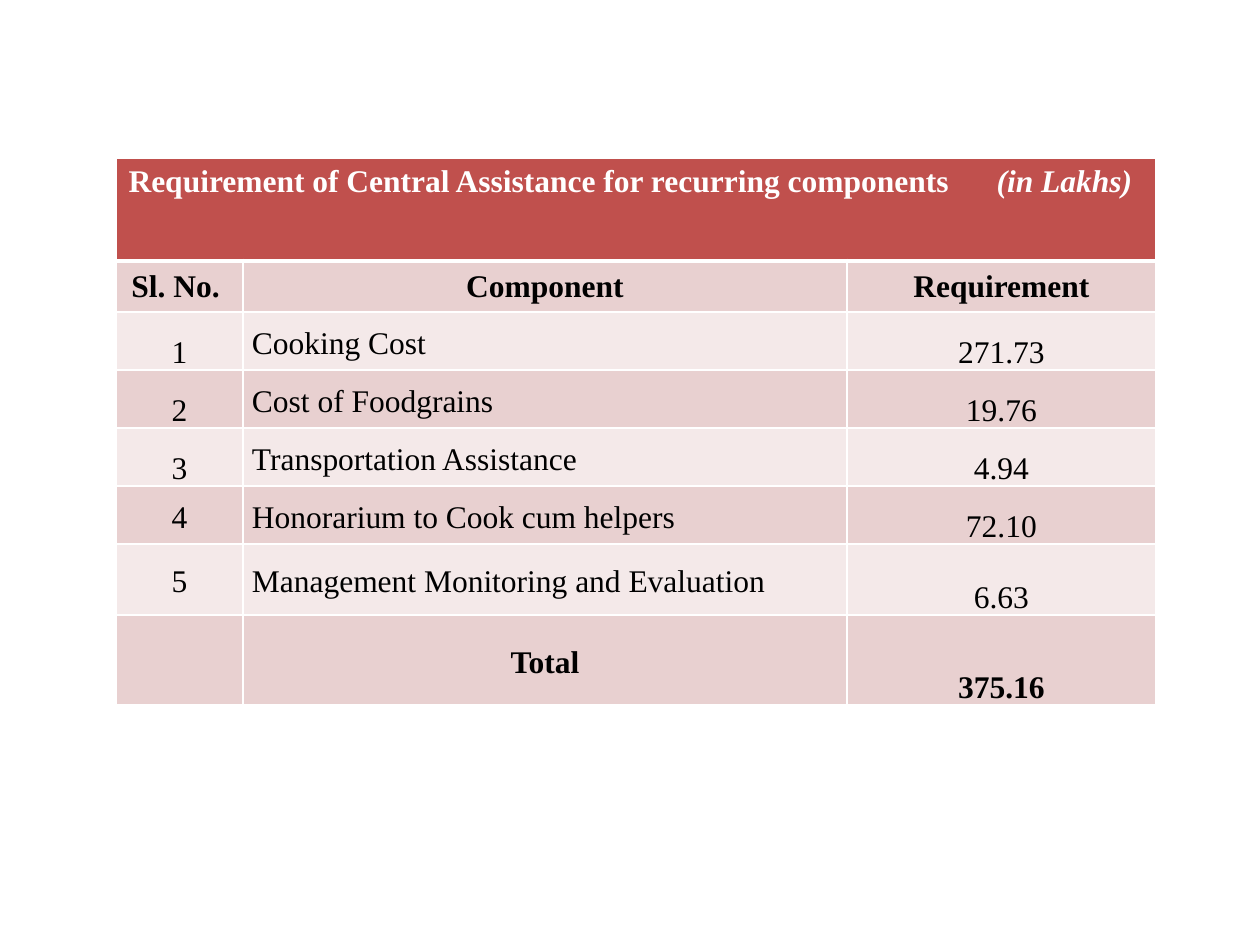
from lxml import etree
from pptx import Presentation
from pptx.dml.color import RGBColor
from pptx.enum.text import MSO_ANCHOR, PP_ALIGN
from pptx.oxml.ns import qn
from pptx.util import Emu, Pt

LEFT, CENTER = PP_ALIGN.LEFT, PP_ALIGN.CENTER
MIDDLE, BOTTOM = MSO_ANCHOR.MIDDLE, MSO_ANCHOR.BOTTOM
COLORS = {"header": "C0504D", "dark": "E8D0D0", "light": "F4E9E9",
          "white": "FFFFFF", "black": "000000"}
FONT = "Times New Roman"
PX = 914400 / 126


def px(n):
    return Emu(round(n * PX))


def add_text(p, text, color="black", bold=False, italic=False, align=LEFT, spacing=None):
    p.alignment = align
    p.line_spacing = spacing
    r = p.add_run()
    r.text = text
    r.font.name, r.font.size = FONT, Pt(18)
    r.font.bold, r.font.italic = bold, italic
    r.font.color.rgb = RGBColor.from_string(COLORS[color])


prs = Presentation()
prs.slide_width, prs.slide_height = px(1260), px(945)
s = prs.slides.add_slide(prs.slide_layouts[6])

# Table grid
col_widths = [127, 604, 309]
row_heights = [103, 51] + [58] * 4 + [71, 90]
tbl = s.shapes.add_table(len(row_heights), len(col_widths), px(116), px(158),
                         px(sum(col_widths)), px(sum(row_heights))).table
for col, w in zip(tbl.columns, col_widths):
    col.width = px(w)
for row, h in zip(tbl.rows, row_heights):
    row.height = px(h)

# White borders, thicker under the heading, and alternating fills
for i, row in enumerate(tbl.rows):
    for cell in row.cells:
        tcPr = cell._tc.get_or_add_tcPr()
        for side in "LRTB":
            thick = (i, side) in [(0, "B"), (1, "T")]
            ln = etree.SubElement(tcPr, qn(f"a:ln{side}"), w=str(Pt(3 if thick else 1)))
            fill = etree.SubElement(ln, qn("a:solidFill"))
            etree.SubElement(fill, qn("a:srgbClr"), val=COLORS["white"])
        cell.fill.solid()
        name = "header" if i == 0 else "dark" if i % 2 else "light"
        cell.fill.fore_color.rgb = RGBColor.from_string(COLORS[name])

# Heading, with the unit at a tab stop
heading = tbl.cell(0, 0)
heading.merge(tbl.cell(0, 2))
p = heading.text_frame.paragraphs[0]
add_text(p, "Requirement of Central Assistance for recurring components\t",
         color="white", bold=True)
add_text(p, "(in Lakhs)", color="white", bold=True, italic=True)
tabs = etree.SubElement(p._p.get_or_add_pPr(), qn("a:tabLst"))
etree.SubElement(tabs, qn("a:tab"), pos=str(px(868)), algn="l")

# Column names, components and total
rows = [
    ("Sl. No. ", "Component", "Requirement"),
    ("1", "Cooking Cost", "271.73"),
    ("2", "Cost of Foodgrains", "19.76"),
    ("3", "Transportation Assistance", "4.94"),
    ("4", "Honorarium to Cook cum helpers", "72.10"),
    ("5", "Management Monitoring and Evaluation", "6.63"),
    ("", "Total", "375.16"),
]
last = len(rows)
for i, texts in enumerate(rows, start=1):
    for j, text in enumerate(texts):
        if not text:
            continue
        cell = tbl.cell(i, j)
        is_value = i > 1 and j == 2
        low = is_value or (j == 0 and 2 <= i <= 4)
        cell.vertical_anchor = BOTTOM if low else MIDDLE
        cell.margin_left = cell.margin_right = px(1 if is_value else 9)
        cell.margin_top, cell.margin_bottom = px(1 if is_value else 0), 0
        add_text(cell.text_frame.paragraphs[0], text, bold=i in (1, last),
                 align=LEFT if j == 1 and 1 < i < last else CENTER,
                 spacing=1.15 if i > 1 and j < 2 else None)

prs.save("out.pptx")
